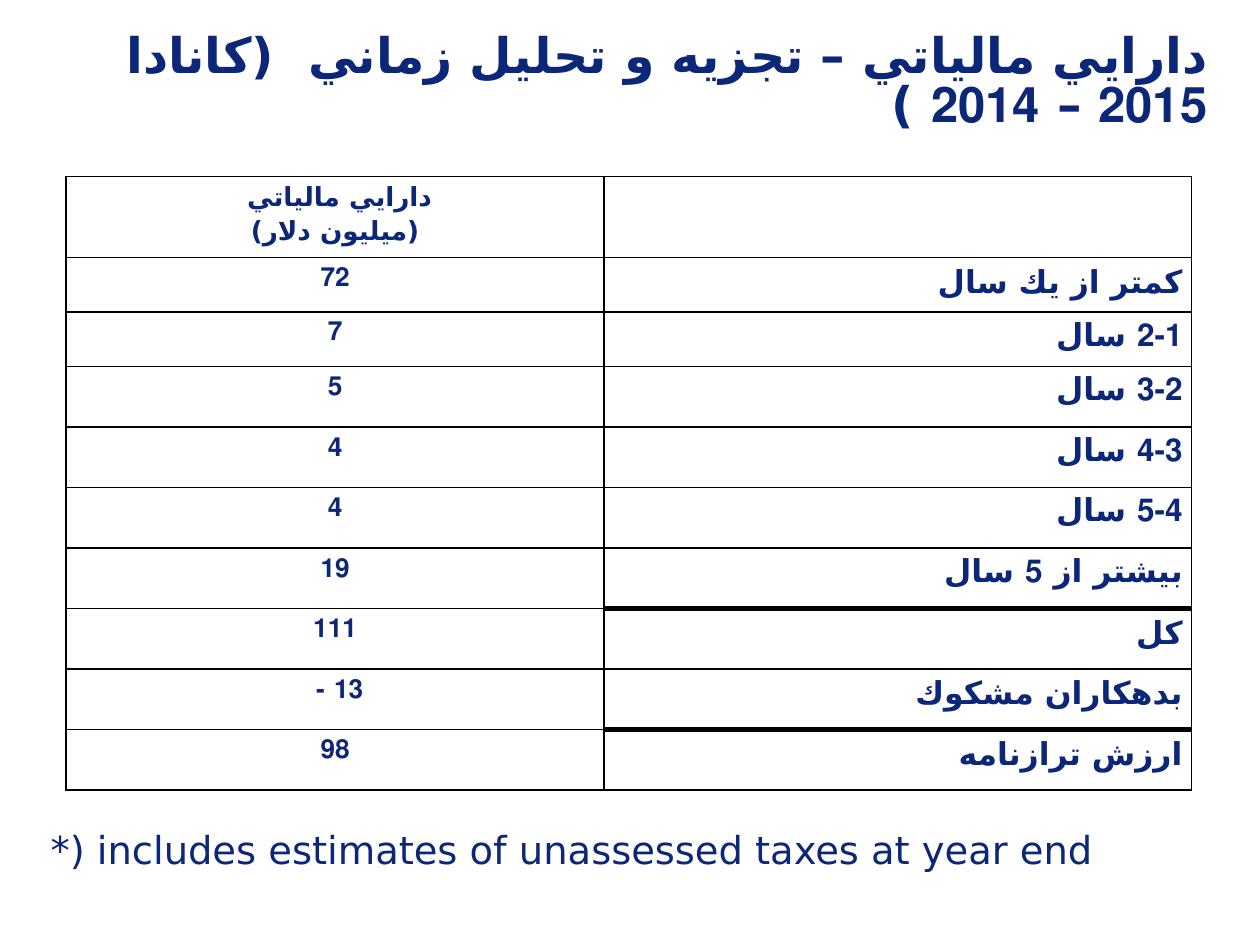
"""Build a slide with a table of tax assets by age."""
import itertools

import pptx
import pptx.dml.color
import pptx.enum.text
import pptx.oxml
import pptx.oxml.ns
import pptx.util

Cm, Pt = pptx.util.Cm, pptx.util.Pt
ALIGN = pptx.enum.text.PP_ALIGN
NAVY, BLACK = "0C2678", "000000"
SANS, SERIF, DIGIT = "DejaVu Sans", "Times New Roman", "Helvetica"

TITLE = "دارايي مالياتي – تجزيه و تحليل زماني  (كانادا  2015 – 2014 )"
NOTE = "*) includes estimates of unassessed taxes at year end"
ROWS = [
    (["دارايي مالياتي ", "(ميليون دلار)"], []),
    (["72"], ["كمتر از يك سال"]),
    (["7"], ["2-1 سال "]),
    (["5"], ["3-2 سال "]),
    (["4"], ["4-3 سال "]),
    (["4"], ["5-4 سال "]),
    (["19"], ["بيشتر از 5 سال "]),
    (["111"], ["كل "]),
    (["13 - "], ["بدهكاران مشكوك "]),
    (["98"], ["ارزش ترازنامه "]),
]
COLS = [(10.85, 15, ALIGN.CENTER), (11.84, 18, ALIGN.RIGHT)]
HIGHS = [1.63] + [1.1] * 2 + [1.22] * 7
RULED = {6, 8}


def color(code):
    return pptx.dml.color.RGBColor.from_string(code)


def number(sign):
    return sign in "0123456789-"


def pieces(line, rtl):
    if not rtl:
        return [(False, line)]
    return [(key, "".join(part))
            for key, part in itertools.groupby(line, number)]


def write(frame, lines, size, face, align, gap, bold=True, rtl=True):
    frame.word_wrap = True
    for i, line in enumerate(lines):
        para = frame.paragraphs[0] if i == 0 else frame.add_paragraph()
        para.alignment = align
        para.line_spacing = Pt(gap)
        if rtl:
            para._p.get_or_add_pPr().set("rtl", "1")
        for digit, text in pieces(line, rtl):
            run = para.add_run()
            run.text = text
            font = run.font
            font.size, font.name, font.bold = Pt(size), face, bold
            font.color.rgb = color(NAVY)
            if rtl:
                font._element.append(pptx.oxml.parse_xml(
                    f'<a:cs {pptx.oxml.ns.nsdecls("a")} '
                    f'typeface="{DIGIT if digit else SANS}"/>'))


def label(slide, text, top, high, size, align, **style):
    box = slide.shapes.add_textbox(Cm(1.02), Cm(top), Cm(23.32), Cm(high))
    frame = box.text_frame
    frame.margin_left = frame.margin_right = 0
    frame.margin_top = frame.margin_bottom = 0
    write(frame, [text], size, SANS, align, size, **style)


def border(cell, above, below):
    props = cell._tc.get_or_add_tcPr()
    sides = [("L", 1), ("R", 1), ("T", above), ("B", below)]
    for i, (side, width) in enumerate(sides):
        props.insert(i, pptx.oxml.parse_xml(
            f'<a:ln{side} {pptx.oxml.ns.nsdecls("a")} w="{Pt(width)}">'
            f'<a:solidFill><a:srgbClr val="{BLACK}"/></a:solidFill>'
            f'</a:ln{side}>'))


def grid(slide):
    wide = sum(col[0] for col in COLS)
    table = slide.shapes.add_table(
        len(ROWS), len(COLS), Cm(1.33), Cm(3.56),
        Cm(wide), Cm(sum(HIGHS))).table
    table.first_row = table.horz_banding = False
    for c, (width, size, align) in enumerate(COLS):
        table.columns[c].width = Cm(width)
        for r, row in enumerate(ROWS):
            table.rows[r].height = Cm(HIGHS[r])
            cell = table.cell(r, c)
            cell.margin_left = cell.margin_right = Cm(0.18)
            cell.margin_top, cell.margin_bottom = Cm(0.04), 0
            cell.fill.background()
            above = 3 if c == 1 and r - 1 in RULED else 1
            below = 3 if c == 1 and r in RULED else 1
            border(cell, above, below)
            write(cell.text_frame, row[c], size, SERIF, align, size * 1.3)


def main():
    deck = pptx.Presentation()
    deck.slide_width, deck.slide_height = Cm(25.4), Cm(19.05)
    slide = deck.slides.add_slide(deck.slide_layouts[6])
    label(slide, TITLE, 0.69, 1.73, 28, ALIGN.RIGHT)
    grid(slide)
    label(slide, NOTE, 16.81, 2.26, 22, ALIGN.LEFT, bold=False, rtl=False)
    deck.save("out.pptx")


if __name__ == "__main__":
    main()
